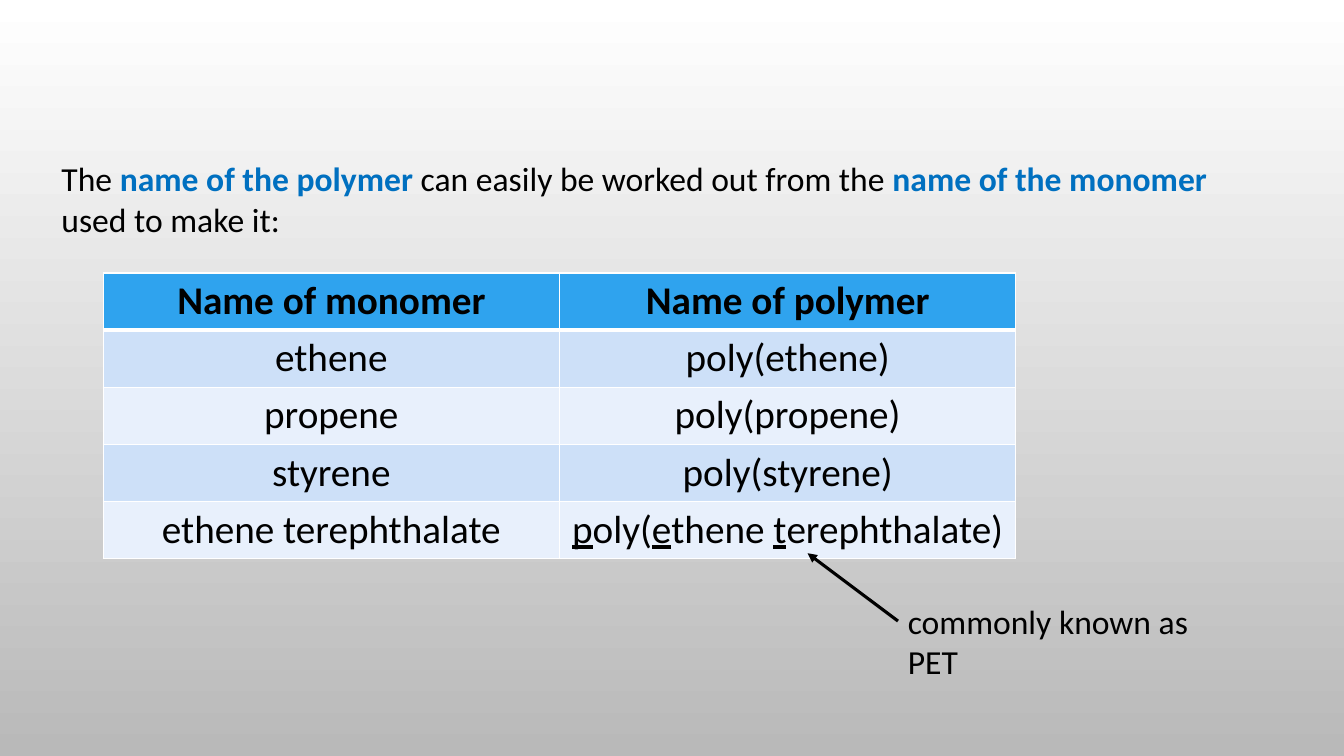
import pptx
import pptx.dml.color
import pptx.enum.shapes
import pptx.enum.text
import pptx.oxml
import pptx.oxml.ns
import pptx.util
from pptx.util import Cm

RGBColor = pptx.dml.color.RGBColor
BLACK = RGBColor(0x00, 0x00, 0x00)
WHITE = RGBColor(0xFF, 0xFF, 0xFF)
GREY = RGBColor(0xB9, 0xB9, 0xB9)
KEYWORD_BLUE = RGBColor(0x00, 0x70, 0xC0)
HEADER_BLUE = RGBColor(0x2F, 0xA3, 0xEE)
BAND_BLUES = (RGBColor(0xCD, 0xE0, 0xF8), RGBColor(0xE8, 0xF0, 0xFC))

FONT = "Calibri"
BODY_SIZE = 24
TABLE_SIZE = 28

HEADINGS = ("Name of monomer", "Name of polymer")
# Underscores enclose the underlined letters.
POLYMERS = (
    ("ethene", "poly(ethene)"),
    ("propene", "poly(propene)"),
    ("styrene", "poly(styrene)"),
    ("ethene terephthalate", "_p_oly(_e_thene _t_erephthalate)"),
)


def add_run(paragraph, text, size, color=BLACK, bold=False, underline=False):
    run = paragraph.add_run()
    run.text = text
    run.font.name = FONT
    run.font.size = pptx.util.Pt(size)
    run.font.color.rgb = color
    run.font.bold = bold
    run.font.underline = underline


def add_text_box(slide, left, top, width, height):
    """Add a wrapping text box and return its first paragraph."""
    frame = slide.shapes.add_textbox(left, top, width, height).text_frame
    frame.word_wrap = True
    return frame.paragraphs[0]


def paint_background(slide):
    fill = slide.background.fill
    fill.gradient()
    fill.gradient_angle = 270
    for stop, color in zip(fill.gradient_stops, (WHITE, GREY)):
        stop.color.rgb = color


def add_introduction(slide, left, top, width, height):
    sentence = add_text_box(slide, left, top, width, height)
    for text, keyword in (
        ("The ", False),
        ("name of the polymer ", True),
        ("can easily be worked out from the ", False),
        ("name of the monomer ", True),
        ("used to make it:", False),
    ):
        add_run(sentence, text, BODY_SIZE, KEYWORD_BLUE if keyword else BLACK, bold=keyword)


def set_borders(cell, bottom_width, top_width):
    """Draw white borders; widths are in points."""
    properties = cell._tc.get_or_add_tcPr()
    widths = {"lnL": 1, "lnR": 1, "lnT": top_width, "lnB": bottom_width}
    for position, (side, width) in enumerate(widths.items()):
        border = pptx.oxml.parse_xml(
            f'<a:{side} {pptx.oxml.ns.nsdecls("a")} w="{pptx.util.Pt(width)}">'
            f'<a:solidFill><a:srgbClr val="{WHITE}"/></a:solidFill></a:{side}>'
        )
        properties.insert(position, border)


def add_name_table(slide, left, top, width, height):
    rows = (HEADINGS,) + POLYMERS
    table = slide.shapes.add_table(len(rows), len(HEADINGS), left, top, width, height).table
    for row_index, names in enumerate(rows):
        is_header = row_index == 0
        for column_index, name in enumerate(names):
            cell = table.cell(row_index, column_index)
            cell.margin_top = cell.margin_bottom = Cm(0.11)
            cell.fill.solid()
            cell.fill.fore_color.rgb = HEADER_BLUE if is_header else BAND_BLUES[(row_index - 1) % 2]
            set_borders(cell, 3 if is_header else 1, 3 if row_index == 1 else 1)
            paragraph = cell.text_frame.paragraphs[0]
            paragraph.alignment = pptx.enum.text.PP_ALIGN.CENTER
            for part_index, part in enumerate(name.split("_")):
                if part:
                    add_run(paragraph, part, TABLE_SIZE, bold=is_header,
                            underline=part_index % 2 == 1)


def add_pet_note(slide, left, top, width, height):
    note = add_text_box(slide, left, top, width, height)
    add_run(note, "commonly known as PET", BODY_SIZE)

    arrow = slide.shapes.add_connector(
        pptx.enum.shapes.MSO_CONNECTOR.STRAIGHT,
        left, top + Cm(0.64), left - Cm(2.28), top - Cm(1.07),
    )
    arrow.line.color.rgb = BLACK
    arrow.line.width = pptx.util.Pt(2.25)
    namespace = pptx.oxml.ns.nsdecls("a")
    arrow.line._get_or_add_ln().append(
        pptx.oxml.parse_xml(f'<a:tailEnd {namespace} type="triangle"/>'))
    arrow._element.spPr.append(pptx.oxml.parse_xml(f"<a:effectLst {namespace}/>"))


def main():
    presentation = pptx.Presentation()
    presentation.slide_width = Cm(33.87)
    presentation.slide_height = Cm(19.05)
    blank_layout = presentation.slide_layouts[6]
    slide = presentation.slides.add_slide(blank_layout)

    paint_background(slide)
    add_introduction(slide, Cm(1.3), Cm(3.86), Cm(30.5), Cm(2.31))
    add_name_table(slide, Cm(2.6), Cm(6.88), Cm(23), Cm(7.2))
    add_pet_note(slide, Cm(22.63), Cm(15.01), Cm(8.97), Cm(2.31))
    presentation.save("out.pptx")


if __name__ == "__main__":
    main()
